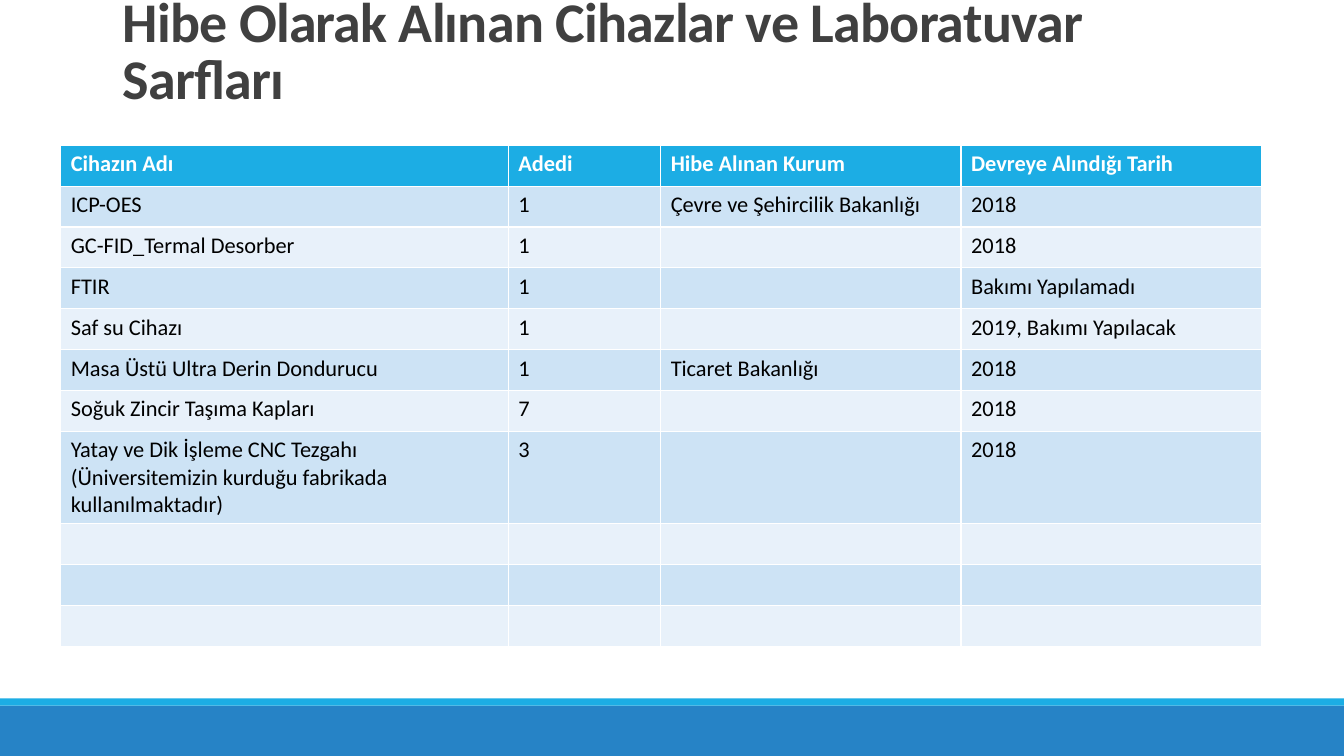
from dataclasses import dataclass

from pptx import Presentation
from pptx import util as u
from pptx.dml.color import RGBColor
from pptx.enum import shapes, text


@dataclass(frozen=True)
class Theme:
    font: str = "Calibri"
    title_size: int = 40
    table_size: int = 16
    title: str = "404040"
    header_text: str = "FFFFFF"
    body_text: str = "000000"
    header_fill: str = "1CADE4"
    row_fills: tuple = ("CDE3F5", "E8F1FA")
    footer: str = "2683C6"
    footer_edge: str = "1CADE4"


class SlideBuilder:
    def __init__(self, page, theme):
        self.page = page
        self.theme = theme

    def format_font(self, font, size, color, bold):
        values = {"name": self.theme.font, "size": u.Pt(size), "bold": bold}
        for name, value in values.items():
            setattr(font, name, value)
        font.color.rgb = RGBColor.from_string(color)

    def bar(self, left, top, width, height, color):
        bar = self.page.shapes.add_shape(
            shapes.MSO_SHAPE.RECTANGLE, left, top, width, height)
        bar.shadow.inherit = False
        bar.fill.solid()
        bar.fill.fore_color.rgb = RGBColor.from_string(color)
        bar.line.fill.background()

    def title(self, wording, left, top, width, height):
        box = self.page.shapes.title
        place = {"left": left, "top": top, "width": width, "height": height}
        for name, value in place.items():
            setattr(box, name, value)
        frame = box.text_frame
        settings = {"word_wrap": True, "auto_size": text.MSO_AUTO_SIZE.NONE,
                    "vertical_anchor": text.MSO_ANCHOR.BOTTOM}
        for name, value in settings.items():
            setattr(frame, name, value)
        para = frame.paragraphs[0]
        para.alignment = text.PP_ALIGN.LEFT
        para.line_spacing = 0.85
        span = para.add_run()
        span.text = wording
        self.format_font(span.font, self.theme.title_size, self.theme.title, True)
        span.font._element.set("spc", "-50")  # letter spacing

    def table(self, rows, left, top, widths, heights):
        table = self.page.shapes.add_table(
            len(rows), len(widths), left, top, sum(widths), sum(heights)).table
        for column, width in zip(table.columns, widths):
            column.width = width
        for index, (row, height) in enumerate(zip(rows, heights)):
            table.rows[index].height = height
            for column, wording in enumerate(row):
                self.cell(table.cell(index, column), wording, index)

    def cell(self, cell, wording, row):
        theme = self.theme
        header = row == 0
        fill = theme.header_fill if header else theme.row_fills[(row - 1) % 2]
        cell.fill.solid()
        cell.fill.fore_color.rgb = RGBColor.from_string(fill)
        if wording:
            span = cell.text_frame.paragraphs[0].add_run()
            span.text = wording
            color = theme.header_text if header else theme.body_text
            self.format_font(span.font, theme.table_size, color, header)


DEVICES = [
    ("Cihazın Adı", "Adedi", "Hibe Alınan Kurum", "Devreye Alındığı Tarih"),
    ("ICP-OES", "1", "Çevre ve Şehircilik Bakanlığı", "2018"),
    ("GC-FID_Termal Desorber", "1", "", "2018"),
    ("FTIR", "1", "", "Bakımı Yapılamadı"),
    ("Saf su Cihazı", "1", "", "2019, Bakımı Yapılacak"),
    ("Masa Üstü Ultra Derin Dondurucu", "1", "Ticaret Bakanlığı", "2018"),
    ("Soğuk Zincir Taşıma Kapları", "7", "", "2018"),
    ("Yatay ve Dik İşleme CNC Tezgahı (Üniversitemizin kurduğu fabrikada "
     "kullanılmaktadır)", "3", "", "2018"),
] + [("",) * 4] * 3
CNC_ROW = 7


def main():
    deck = Presentation()
    deck.slide_width, deck.slide_height = u.Cm(33.87), u.Cm(19.05)
    theme = Theme()
    page = deck.slides.add_slide(deck.slide_layouts[5])
    builder = SlideBuilder(page, theme)

    # Footer bands
    footer_top, edge = u.Cm(17.78), u.Cm(0.18)
    builder.bar(0, footer_top, deck.slide_width,
                deck.slide_height - footer_top, theme.footer)
    builder.bar(0, footer_top - edge, deck.slide_width, edge, theme.footer_edge)

    # Title
    builder.title("Hibe Olarak Alınan Cihazlar ve Laboratuvar Sarfları",
                  u.Cm(2.84), u.Cm(0.89), u.Cm(27.94), u.Cm(2.03))

    # Table of donated devices
    widths = [u.Cm(width) for width in (11.28, 3.84, 7.57, 7.57)]
    heights = [u.Cm(2.32 if row == CNC_ROW else 1.03)
               for row in range(len(DEVICES))]
    builder.table(DEVICES, u.Cm(1.53), u.Cm(3.66), widths, heights)

    deck.save("out.pptx")


if __name__ == "__main__":
    main()
